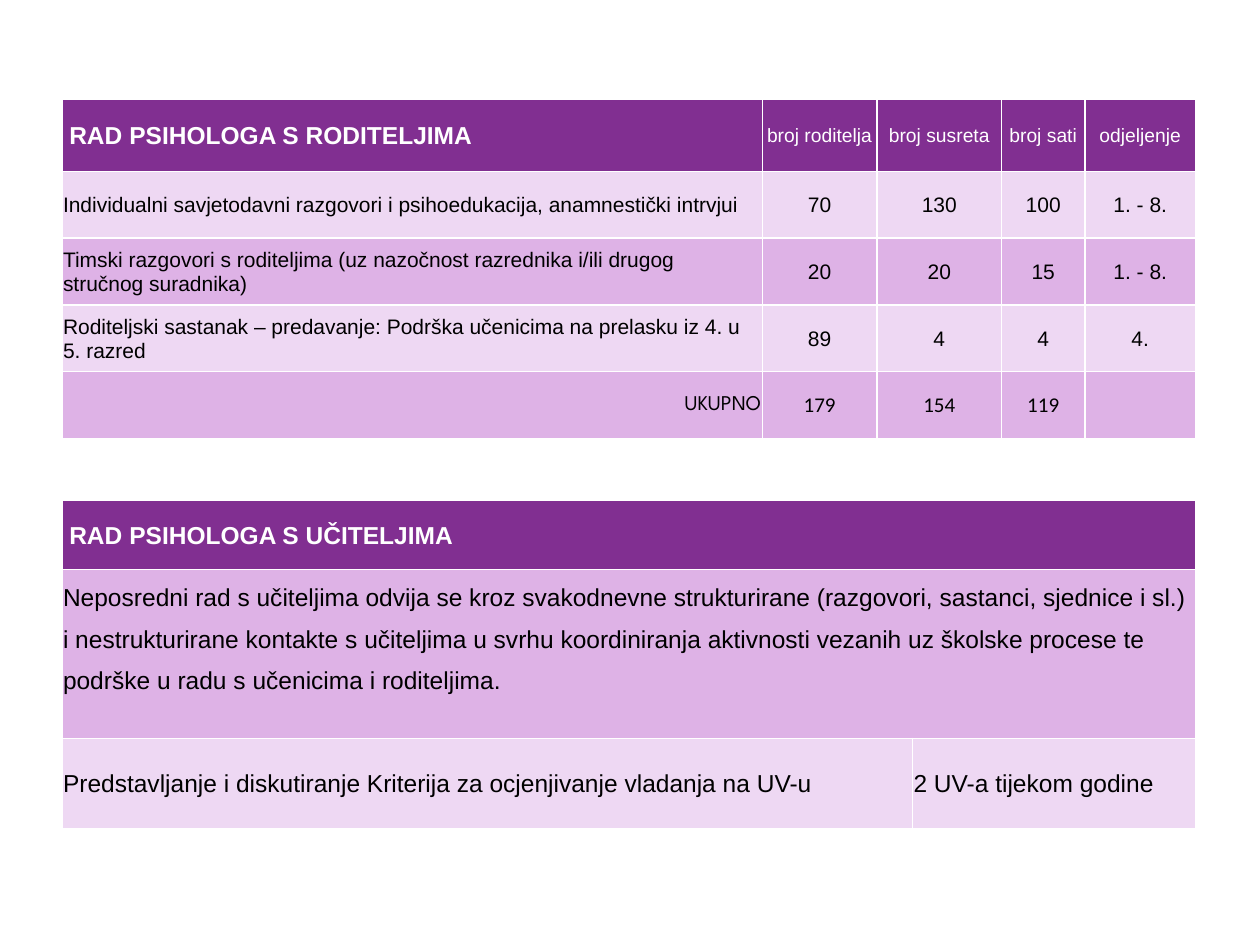
"""Build a slide with two tables on a psychologist's work with parents and teachers."""
from lxml import etree
from pptx import Presentation
from pptx.dml.color import RGBColor
from pptx.enum.text import MSO_ANCHOR, PP_ALIGN
from pptx.oxml.ns import qn
from pptx.util import Inches, Pt

LEFT, MID, RIGHT = PP_ALIGN.LEFT, PP_ALIGN.CENTER, PP_ALIGN.RIGHT
TOP, CENTER = MSO_ANCHOR.TOP, MSO_ANCHOR.MIDDLE
DARK, LIGHT, MAUVE = "812F91", "EED8F3", "DEB2E6"
WHITE, BLACK = "FFFFFF", "000000"


def add_grid(top, cols, rows):
    frame = slide.shapes.add_table(len(rows), len(cols), Inches(0.49), Inches(top),
                                   Inches(sum(cols)), Inches(sum(rows)))
    grid = frame.table
    grid.horz_banding = False
    for col, width in zip(grid.columns, cols):
        col.width = Inches(width)
    for row, height in zip(grid.rows, rows):
        row.height = Inches(height)
    return grid


def set_cell(cell, text, fill, size, align=LEFT, font="Arial", bold=False):
    props = cell._tc.get_or_add_tcPr()
    for side in ("lnL", "lnR", "lnT", "lnB"):
        line = etree.SubElement(props, qn(f"a:{side}"), w=str(Pt(1)))
        solid = etree.SubElement(line, qn("a:solidFill"))
        etree.SubElement(solid, qn("a:srgbClr"), val=WHITE)
    cell.fill.solid()
    cell.fill.fore_color.rgb = RGBColor.from_string(fill)
    cell.margin_left = Inches(0.06 if bold else 0.01)
    cell.margin_right = cell.margin_top = Inches(0.01)
    cell.margin_bottom = Inches(0)
    cell.vertical_anchor = CENTER
    para = cell.text_frame.paragraphs[0]
    para.alignment = align
    if text:
        run = para.add_run()
        run.text = text
        run.font.size = Pt(size)
        run.font.name = font
        run.font.bold = bold
        run.font.color.rgb = RGBColor.from_string(WHITE if fill == DARK else BLACK)


prs = Presentation()
prs.slide_width, prs.slide_height = Inches(10), Inches(7.5)
slide = prs.slides.add_slide(prs.slide_layouts[6])

data = [
    ["RAD PSIHOLOGA S RODITELJIMA", "broj roditelja", "broj susreta", "broj sati", "odjeljenje"],
    ["Individualni savjetodavni razgovori i psihoedukacija, anamnestički intrvjui",
     "70", "130", "100", "1. - 8."],
    ["Timski razgovori s roditeljima (uz nazočnost razrednika i/ili drugog stručnog suradnika)",
     "20", "20", "15", "1. - 8."],
    ["Roditeljski sastanak – predavanje: Podrška učenicima na prelasku iz 4. u 5. razred",
     "89", "4", "4", "4."],
    ["UKUPNO", "179", "154", "119", ""],
]
last = len(data) - 1
parents = add_grid(0.79, [5.56, 0.91, 0.99, 0.66, 0.88], [0.57] + [0.53] * last)
for r, row in enumerate(data):
    fill = DARK if r == 0 else (MAUVE, LIGHT)[r % 2]
    for c, text in enumerate(row):
        title = r == 0 and c == 0
        size = 14 if title else 11 if r == 0 else 12
        align, font = (MID, "Calibri" if r == last else "Arial")
        if c == 0:
            align, font = (RIGHT, "League Spartan") if r == last else (LEFT, "Arial")
        set_cell(parents.cell(r, c), text, fill, size, align, font, title)

staff = add_grid(3.97, [6.75, 2.25], [0.55, 1.34, 0.72])
for r in (0, 1):
    staff.cell(r, 0).merge(staff.cell(r, 1))
note = ("Neposredni rad s učiteljima odvija se kroz svakodnevne strukturirane "
        "(razgovori, sastanci, sjednice i sl.) i nestrukturirane kontakte s učiteljima "
        "u svrhu koordiniranja aktivnosti vezanih uz školske procese te podrške u radu "
        "s učenicima i roditeljima.")
items = [
    (0, 0, "RAD PSIHOLOGA S UČITELJIMA", DARK),
    (0, 1, "", DARK),
    (1, 0, note, MAUVE),
    (1, 1, "", MAUVE),
    (2, 0, "Predstavljanje i diskutiranje Kriterija za ocjenjivanje vladanja na UV-u", LIGHT),
    (2, 1, "2 UV-a tijekom godine", LIGHT),
]
for r, c, text, fill in items:
    set_cell(staff.cell(r, c), text, fill, 14, bold=r == 0)
body = staff.cell(1, 0)
body.vertical_anchor = TOP
body.text_frame.paragraphs[0].line_spacing = 1.5

prs.save("out.pptx")
